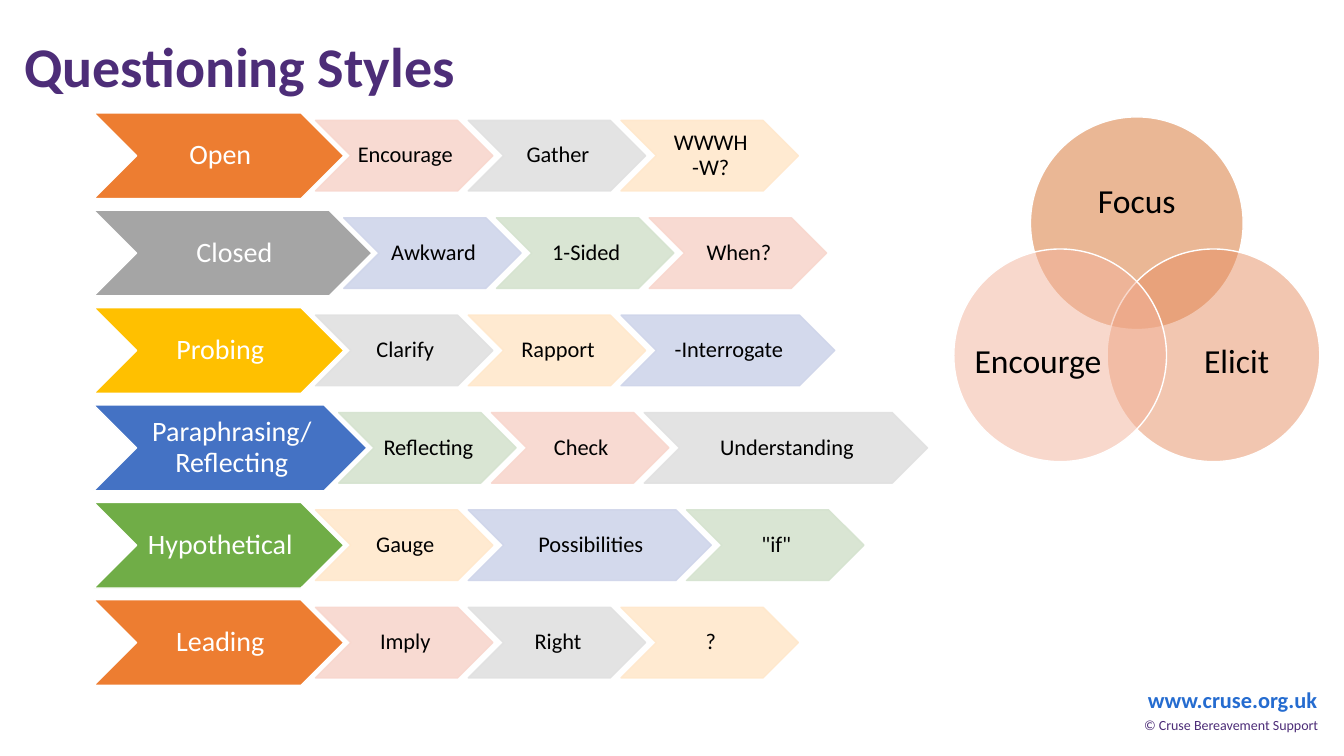
from pptx import Presentation
from pptx import util as u
from pptx.dml.color import RGBColor
from pptx.enum import shapes, text
from pptx.oxml.ns import qn
from lxml import etree

PINK, GREY, CREAM, BLUE, GREEN = "F8D7CE", "E1E1E1", "FFE8CC", "CFD5EA", "D5E3CF"
PURPLE, WHITE, BLACK = "4D2D78", "FFFFFF", "000000"

STYLES = [
    (("Open", "ED7D31", 2.48),
     [("Encourage", PINK, 1.76), ("Gather", GREY, 1.76), ("WWWH -W?", CREAM, 1.76)]),
    (("Closed", "A5A5A5", 2.76),
     [("Awkward", BLUE, 1.76), ("1-Sided", GREEN, 1.76), ("When?", PINK, 1.76)]),
    (("Probing", "FFC000", 2.48),
     [("Clarify", GREY, 1.76), ("Rapport", CREAM, 1.76), ("-Interrogate", BLUE, 2.12)]),
    (("Paraphrasing/ Reflecting", "4472C4", 2.71),
     [("Reflecting", GREEN, 1.76), ("Check", PINK, 1.76), ("Understanding", GREY, 2.81)]),
    (("Hypothetical", "70AD47", 2.48),
     [("Gauge", CREAM, 1.76), ("Possibilities", BLUE, 2.41), ('"if"', GREEN, 1.76)]),
    (("Leading", "ED7D31", 2.48),
     [("Imply", PINK, 1.76), ("Right", GREY, 1.76), ("?", CREAM, 1.76)]),
]
CIRCLES = [
    ("Focus", "D7712C", (10.22, 1.16), (10.5, 1.53, 1.55, 0.95)),
    ("Elicit", "E78F62", (10.98, 2.47), (11.63, 3.02, 1.27, 1.16)),
    ("Encourge", "F3B39B", (9.46, 2.47), (9.66, 3.02, 1.27, 1.16)),
]
LEFT, TOP, BOTTOM_ROW = 0.93, 1.12, 5.95
STYLE_H, TRAIT_H = 0.85, 0.7
STYLE_OVERLAP, TRAIT_OVERLAP = 0.33 * STYLE_H, 0.35 * TRAIT_H
DIAMETER = 2.11

prs = Presentation()
prs.slide_width, prs.slide_height = u.Inches(13.33), u.Inches(7.5)
s = prs.slides.add_slide(prs.slide_layouts[6])


def color(fill, value, alpha=100):
    fill.solid()
    fill.fore_color.rgb = RGBColor.from_string(value)
    if alpha < 100:
        node = fill._xPr.find(qn("a:solidFill"))[0]
        etree.SubElement(node, qn("a:alpha")).set("val", str(alpha * 1000))


def write(sp, words, size=16, c=BLACK, bold=False, align="CENTER", anchor="MIDDLE",
          spacing=0.9, ins=(0, 0, 0, 0)):
    tf = sp.text_frame
    tf.word_wrap = True
    tf.vertical_anchor = text.MSO_ANCHOR[anchor]
    tf.margin_left, tf.margin_top, tf.margin_right, tf.margin_bottom = map(u.Inches, ins)
    p = tf.paragraphs[0]
    p.alignment = text.PP_ALIGN[align]
    p.line_spacing = spacing
    r = p.add_run()
    r.text = words
    r.font.name, r.font.size, r.font.bold = "Calibri", u.Pt(size), bold
    color(r.font.fill, c)


def box(at, words, **fmt):
    write(s.shapes.add_textbox(*map(u.Inches, at)), words, **fmt)


def shape(kind, at, fill, line=WHITE, alpha=100, line_alpha=100):
    sp = s.shapes.add_shape(kind, *map(u.Inches, at))
    sp.shadow.inherit = False
    color(sp.fill, fill, alpha)
    color(sp.line.fill, line, line_alpha)
    sp.line.width = u.Pt(1)
    return sp


def main():
    pad = (0.1, 0.05, 0.1, 0.05)
    box((11.26, 6.76, 1.93, 0.37), "www.cruse.org.uk", c="256CD0", bold=True,
        anchor="TOP", spacing=1, ins=pad)
    box((11.2, 7.06, 2.02, 0.44), "© Cruse Bereavement Support", size=10, c=PURPLE,
        anchor="TOP", spacing=1, ins=pad)
    box((0.14, 0.14, 9.52, 1.1), "Questioning Styles", size=40, c=PURPLE, bold=True,
        align="LEFT", ins=pad)

    chevron = shapes.MSO_SHAPE.CHEVRON
    pitch = (BOTTOM_ROW - TOP) / (len(STYLES) - 1)
    for i, ((style, fill, width), traits) in enumerate(STYLES):
        y = TOP + i * pitch
        sp = shape(chevron, (LEFT, y, width, STYLE_H), fill)
        write(sp, style, size=20, c=WHITE, ins=(0.03, 0.01, 0, 0.01))
        x = LEFT + width - STYLE_OVERLAP
        y += (STYLE_H - TRAIT_H) / 2
        for trait, tint, w in traits:
            sp = shape(chevron, (x, y, w, TRAIT_H), tint, tint, 90, 90)
            write(sp, trait, ins=(0.02, 0.01, 0, 0.01))
            x += w - TRAIT_OVERLAP

    for label, fill, corner, label_at in CIRCLES:
        shape(shapes.MSO_SHAPE.OVAL, (*corner, DIAMETER, DIAMETER), fill, alpha=50)
        box(label_at, label, size=24)

    prs.save("out.pptx")


if __name__ == "__main__":
    main()
